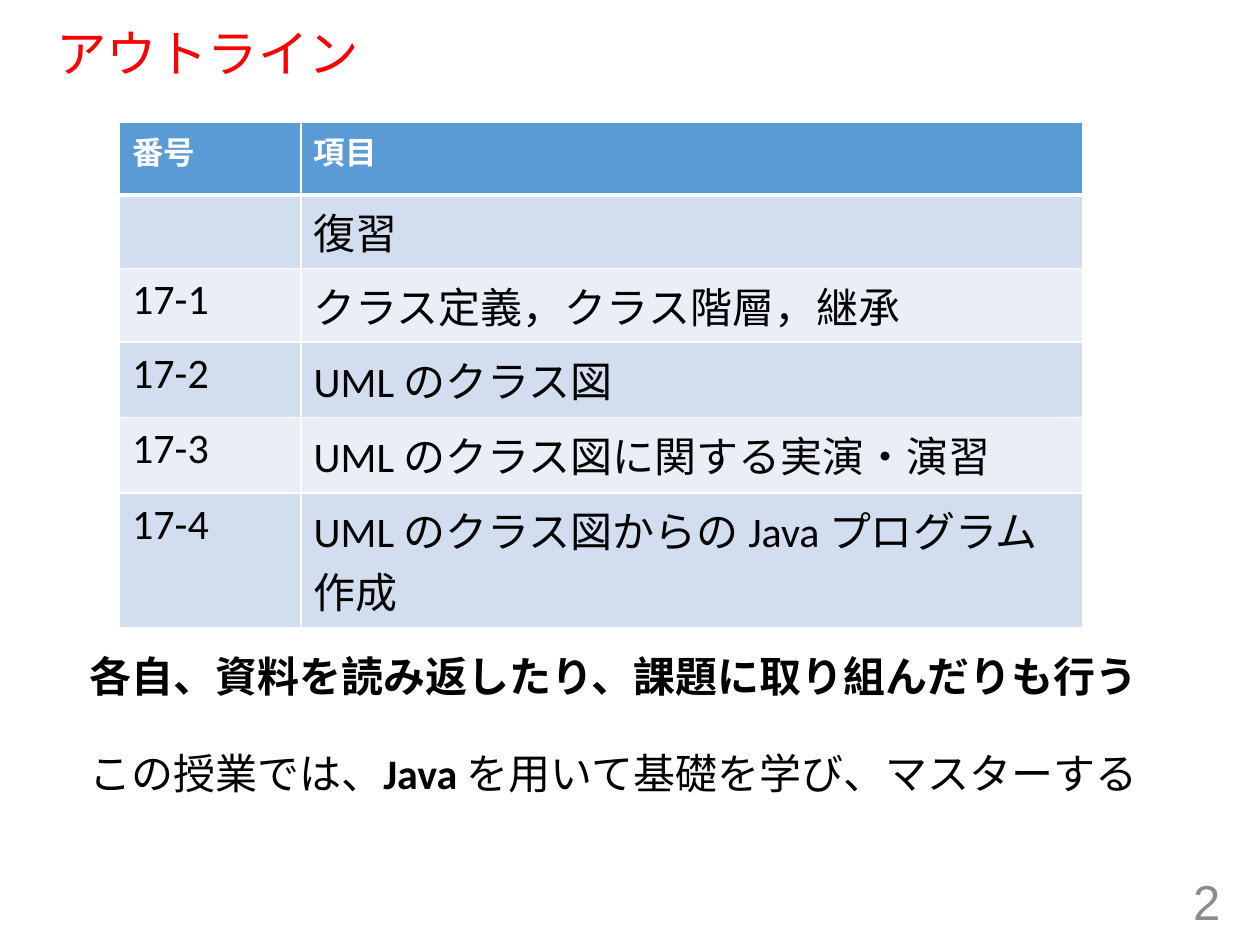
from dataclasses import dataclass

from lxml import etree
from pptx import Presentation
from pptx.dml.color import RGBColor
from pptx.enum.text import MSO_ANCHOR, PP_ALIGN
from pptx.oxml.ns import qn
from pptx.util import Cm, Pt

TOP, MID = MSO_ANCHOR.TOP, MSO_ANCHOR.MIDDLE
LEFT, RIGHT = PP_ALIGN.LEFT, PP_ALIGN.RIGHT

RED = RGBColor(0xFF, 0x00, 0x00)
GRAY = RGBColor(0x8C, 0x8C, 0x8C)
BLACK = RGBColor(0x00, 0x00, 0x00)
WHITE = RGBColor(0xFF, 0xFF, 0xFF)
BLUE = RGBColor(0x5B, 0x9B, 0xD5)
BANDS = (RGBColor(0xEA, 0xEF, 0xF7), RGBColor(0xD2, 0xDE, 0xEF))

BODY = {"name": "Calibri", "size": Pt(24), "bold": False}
BOLD = {**BODY, "bold": True}
HEAD = {**BOLD, "size": Pt(18)}
TITLE = {"name": "Arial", "size": Pt(28.8)}
PAGE = {"name": "Arial", "size": Pt(28)}

COLS = (3.66, 15.75)
HIGHS = (1.47, 1.19, 1.19, 1.52, 1.52, 1.52)
ROWS = (
    ("番号", "項目"),
    ("", "復習"),
    ("17-1", "クラス定義，クラス階層，継承"),
    ("17-2", "UML のクラス図"),
    ("17-3", "UML のクラス図に関する実演・演習"),
    ("17-4", "UML のクラス図からの Java プログラム作成"),
)


@dataclass
class Label:
    box: tuple
    runs: tuple
    color: RGBColor = BLACK
    align: PP_ALIGN = LEFT
    anchor: MSO_ANCHOR = TOP
    gap: float = 1.0


LABELS = (
    Label((0.89, 0.48, 23.5, 1.3), (("アウトライン", TITLE),), RED, anchor=MID, gap=0.9),
    Label((19.13, 17.65, 5.72, 1.02), (("2", PAGE),), GRAY, RIGHT, MID),
    Label((1.55, 12.98, 21.9, 1.27),
          (("各自、資料を読み返したり、課題に取り組んだりも行う", BOLD),)),
    Label((1.55, 14.94, 21.82, 1.27),
          (("この授業では、", BODY), ("Java ", BOLD),
           ("を用いて基礎を学び、マスターする", BODY))),
)


def style(font, look: dict, color: RGBColor) -> None:
    for key, value in look.items():
        setattr(font, key, value)
    font.color.rgb = color


def add_label(slide, label: Label) -> None:
    frame = slide.shapes.add_textbox(*map(Cm, label.box)).text_frame
    frame.word_wrap = True
    frame.vertical_anchor = label.anchor
    para = frame.paragraphs[0]
    para.alignment = label.align
    para.line_spacing = label.gap
    for text, look in label.runs:
        run = para.add_run()
        run.text = text
        style(run.font, look, label.color)


def edge(cell, low: float) -> None:
    """Draw white cell borders, the bottom one `low` points wide."""
    props = cell._tc.get_or_add_tcPr()
    sides = {"a:lnL": 1, "a:lnR": 1, "a:lnT": 1, "a:lnB": low}
    for spot, (tag, width) in enumerate(sides.items()):
        line = etree.Element(qn(tag), w=str(Pt(width)))
        fill = etree.SubElement(line, qn("a:solidFill"))
        etree.SubElement(fill, qn("a:srgbClr"), val=str(WHITE))
        props.insert(spot, line)


def add_grid(slide) -> None:
    table = slide.shapes.add_table(
        len(ROWS), len(COLS), Cm(2.41), Cm(2.46), Cm(sum(COLS)), Cm(sum(HIGHS))
    ).table
    for col, width in zip(table.columns, COLS):
        col.width = Cm(width)
    for r, (texts, high) in enumerate(zip(ROWS, HIGHS)):
        table.rows[r].height = Cm(high)
        look, ink, back = (BODY, BLACK, BANDS[r % 2]) if r else (HEAD, WHITE, BLUE)
        for c, text in enumerate(texts):
            cell = table.cell(r, c)
            cell.text = text
            style(cell.text_frame.paragraphs[0].font, look, ink)
            cell.fill.solid()
            cell.fill.fore_color.rgb = back
            edge(cell, 1 if r else 3)


def main() -> None:
    deck = Presentation()
    deck.slide_width, deck.slide_height = Cm(25.4), Cm(19.05)
    slide = deck.slides.add_slide(deck.slide_layouts[6])
    add_grid(slide)
    for label in LABELS:
        add_label(slide, label)
    deck.save("out.pptx")


if __name__ == "__main__":
    main()
